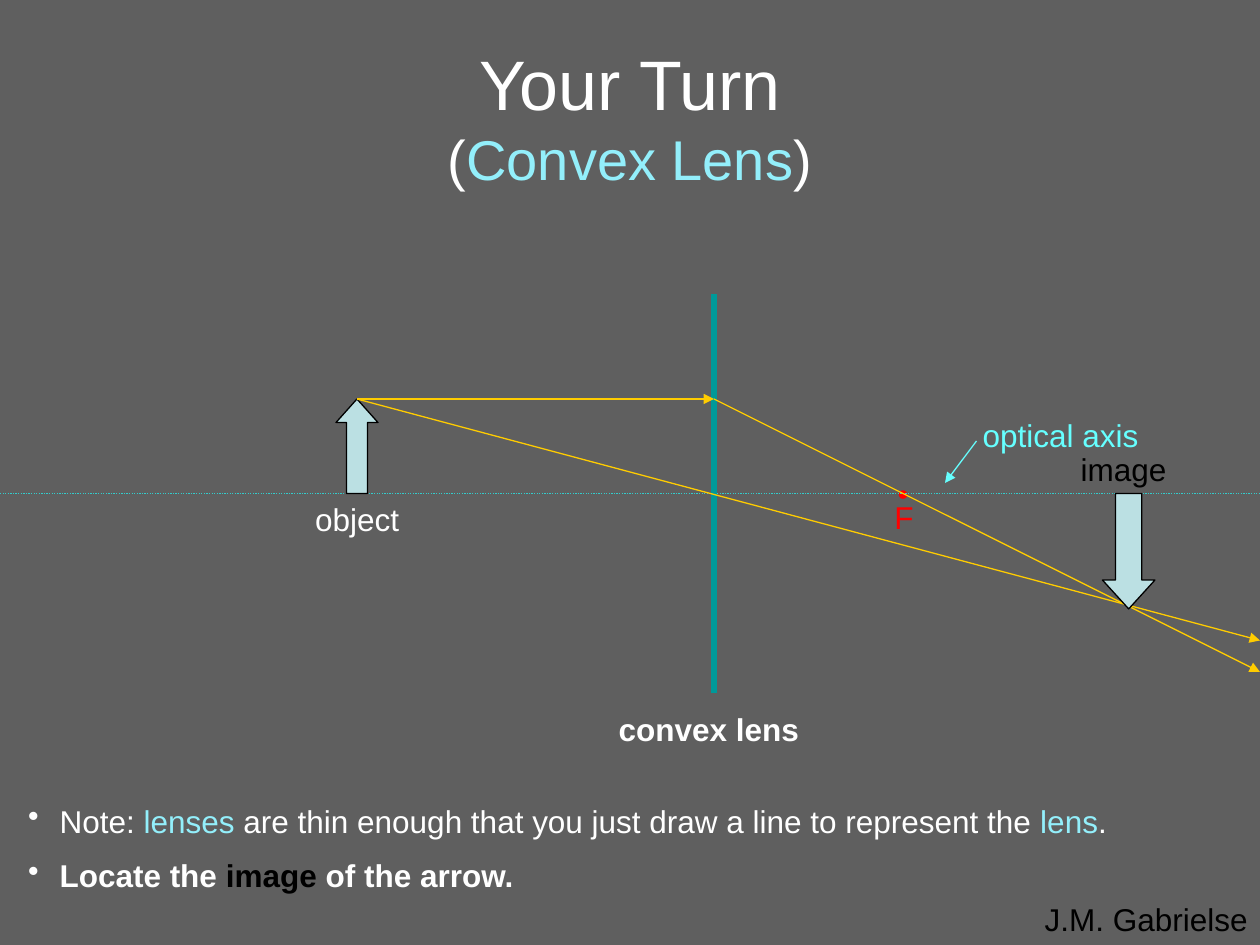
from dataclasses import dataclass

from lxml import etree
from pptx import Presentation
from pptx.dml.color import RGBColor
from pptx.enum.dml import MSO_LINE
from pptx.enum.shapes import MSO_CONNECTOR, MSO_SHAPE
from pptx.enum.text import MSO_ANCHOR, MSO_AUTO_SIZE, PP_ALIGN
from pptx.oxml.ns import qn
from pptx.util import Pt

STRAIGHT = MSO_CONNECTOR.STRAIGHT
UP_ARROW, DOWN_ARROW = MSO_SHAPE.UP_ARROW, MSO_SHAPE.DOWN_ARROW
CENTER, RIGHT, LEFT = PP_ALIGN.CENTER, PP_ALIGN.RIGHT, PP_ALIGN.LEFT
DOTTED = MSO_LINE.ROUND_DOT

BLACK = RGBColor(0x00, 0x00, 0x00)
WHITE = RGBColor(0xFF, 0xFF, 0xFF)
GRAY = RGBColor(0x5F, 0x5F, 0x5F)
RED = RGBColor(0xFF, 0x00, 0x00)
CYAN = RGBColor(0x66, 0xFF, 0xFF)
PALE_CYAN = RGBColor(0x93, 0xEF, 0xFB)
AXIS_TEAL = RGBColor(0x33, 0xCC, 0xCC)
LENS_TEAL = RGBColor(0x00, 0x99, 0x99)
RAY_YELLOW = RGBColor(0xFF, 0xCC, 0x00)
ARROW_BLUE = RGBColor(0xBB, 0xE0, 0xE3)

FONT = "Arial"
WIDTH, HEIGHT = 720, 540
AXIS_Y = 282
LENS_X = 408
OBJECT_X, OBJECT_TIP_Y = 204, 228


@dataclass
class Label:
    text: str
    left: float
    top: float
    width: float
    color: RGBColor
    align: PP_ALIGN = CENTER
    bold: bool = False


@dataclass
class Line:
    start: tuple[float, float]
    end: tuple[float, float]
    color: RGBColor
    width: float = 0.75
    arrow: bool = False
    dash: MSO_LINE | None = None


@dataclass
class BlockArrow:
    kind: MSO_SHAPE
    left: float
    top: float
    width: float
    height: float
    head: float


LABELS = [
    Label("J.M. Gabrielse", 516, 511, 204, BLACK, RIGHT),
    Label("optical axis", 444, 234, 324, CYAN),
    Label("object", 162, AXIS_Y, 84, WHITE),
    Label("convex lens", 330, 402, 150, WHITE, bold=True),
    Label("image", 600, 253.5, 84, BLACK),
]

AXIS_LINES = [
    Line((0, AXIS_Y), (WIDTH, AXIS_Y), AXIS_TEAL, dash=DOTTED),
    Line((558, 252), (540, 276), CYAN, arrow=True),
    Line((LENS_X, 168), (LENS_X, 396), LENS_TEAL, width=3),
]

OBJECT_TIP = (OBJECT_X, OBJECT_TIP_Y)
LENS_HIT = (LENS_X, OBJECT_TIP_Y)
RAYS = [
    Line(start, end, RAY_YELLOW, arrow=True)
    for start, end in [
        (OBJECT_TIP, LENS_HIT),
        (LENS_HIT, (WIDTH, 384)),
        (OBJECT_TIP, (WIDTH, 366)),
    ]
]

OBJECT_ARROW = BlockArrow(UP_ARROW, 192, OBJECT_TIP_Y, 24, 54, 0.56)
IMAGE_ARROW = BlockArrow(DOWN_ARROW, 630, AXIS_Y, 30, 66, 0.55)

NOTES = [
    (False, [("Note: ", WHITE), ("lenses ", PALE_CYAN),
             ("are thin enough that you just draw a line to represent the ", WHITE),
             ("lens", PALE_CYAN), (".", WHITE)]),
    (True, [("Locate the ", WHITE), ("image ", BLACK), ("of the arrow.", WHITE)]),
]


def set_font(font, size: float, color: RGBColor | None = None, bold: bool = False) -> None:
    font.name, font.size, font.bold = FONT, Pt(size), bold
    if color is not None:
        font.color.rgb = color


def add_runs(paragraph, runs: list[tuple[str, RGBColor]]) -> None:
    for text, color in runs:
        run = paragraph.add_run()
        run.text = text
        run.font.color.rgb = color


def add_frame(slide, left: float, top: float, width: float, height: float):
    box = slide.shapes.add_textbox(Pt(left), Pt(top), Pt(width), Pt(height))
    box.text_frame.word_wrap = True
    return box.text_frame


def add_label(slide, label: Label) -> None:
    frame = add_frame(slide, label.left, label.top, label.width, 29)
    paragraph = frame.paragraphs[0]
    paragraph.text = label.text
    paragraph.alignment = label.align
    set_font(paragraph.font, 18, label.color, label.bold)


def add_line(slide, line: Line) -> None:
    connector = slide.shapes.add_connector(
        STRAIGHT, *(Pt(value) for value in (*line.start, *line.end)))
    connector.line.color.rgb = line.color
    connector.line.width = Pt(line.width)
    if line.dash is not None:
        connector.line.dash_style = line.dash
    properties = connector.element.spPr
    if line.arrow:
        etree.SubElement(properties.find(qn("a:ln")), qn("a:tailEnd"), type="triangle")
    etree.SubElement(properties, qn("a:effectLst"))


def add_block_arrow(slide, arrow: BlockArrow) -> None:
    shape = slide.shapes.add_shape(
        arrow.kind, Pt(arrow.left), Pt(arrow.top), Pt(arrow.width), Pt(arrow.height))
    shape.adjustments[0], shape.adjustments[1] = 0.5, arrow.head
    shape.shadow.inherit = False
    shape.fill.solid()
    shape.fill.fore_color.rgb = ARROW_BLUE
    shape.line.color.rgb = BLACK
    shape.line.width = Pt(0.75)


def fill_title(title) -> None:
    title.left, title.top, title.width, title.height = Pt(36), Pt(21.6), Pt(648), Pt(90)
    frame = title.text_frame
    frame.auto_size = MSO_AUTO_SIZE.NONE
    frame.vertical_anchor = MSO_ANCHOR.MIDDLE
    paragraph = frame.paragraphs[0]
    paragraph.alignment = CENTER
    set_font(paragraph.font, 32)
    add_runs(paragraph, [("Your Turn", WHITE)])
    paragraph.runs[0].font.size = Pt(40)
    paragraph.add_line_break()
    add_runs(paragraph, [("(", WHITE), ("Convex Lens", PALE_CYAN), (")", WHITE)])


def add_focal_point(slide) -> None:
    frame = add_frame(slide, 504, AXIS_Y, 24, 27)
    frame.text = "•\nF"
    for paragraph in frame.paragraphs:
        paragraph.alignment = CENTER
        paragraph.line_spacing = 0.2
        paragraph.space_before = Pt(9)
        set_font(paragraph.font, 18, RED)


def add_notes_list(slide) -> None:
    frame = add_frame(slide, 0, 454.5, WIDTH, 61)
    for index, (bold, runs) in enumerate(NOTES):
        paragraph = frame.add_paragraph() if index else frame.paragraphs[0]
        paragraph.alignment = LEFT
        paragraph.space_before = Pt(9.5 if index else 0)
        set_font(paragraph.font, 18, WHITE, bold)
        add_runs(paragraph, runs)
        properties = paragraph._p.get_or_add_pPr()
        properties.set("marL", str(Pt(27)))
        properties.set("indent", str(-Pt(18)))
        bullet = etree.Element(qn("a:buChar"), char="•")
        properties.find(qn("a:defRPr")).addprevious(bullet)


def main() -> None:
    presentation = Presentation()
    presentation.slide_width, presentation.slide_height = Pt(WIDTH), Pt(HEIGHT)
    slide = presentation.slides.add_slide(presentation.slide_layouts[5])
    slide.background.fill.solid()
    slide.background.fill.fore_color.rgb = GRAY

    # Text
    fill_title(slide.shapes.title)
    for label in LABELS:
        add_label(slide, label)
    add_focal_point(slide)
    add_notes_list(slide)

    # Ray diagram
    for line in AXIS_LINES:
        add_line(slide, line)
    add_block_arrow(slide, OBJECT_ARROW)
    for ray in RAYS:
        add_line(slide, ray)
    add_block_arrow(slide, IMAGE_ARROW)

    presentation.save("out.pptx")


if __name__ == "__main__":
    main()
